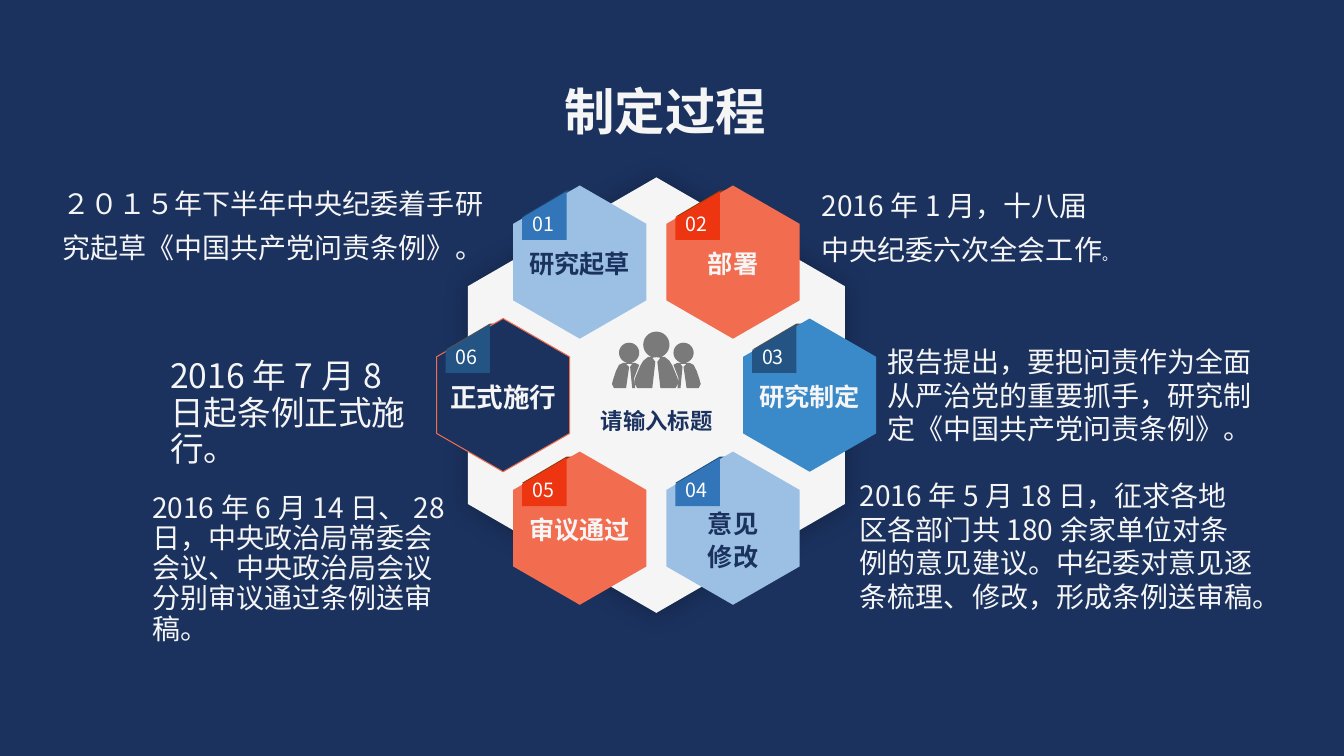
import math
from dataclasses import dataclass

from lxml import etree
from pptx import Presentation
from pptx.dml.color import RGBColor
from pptx.enum import text as t
from pptx.oxml import ns
from pptx.util import Inches, Pt

COLORS = {
    "navy": "1B325F", "white": "FFFFFF", "paper": "F5F5F5", "gray": "7A7A7A",
    "sky": "9CC0E4", "blue": "3A89C9", "coral": "F26C4F",
    "blue tag": "3275B8", "red tag": "ED3611", "teal tag": "245484",
    "blue fold": "1F4E79", "brown fold": "843C0B", "gray fold": "525252",
}
SANS = "Noto Sans CJK SC"
SANS_JP = "Noto Sans CJK JP"
CENTER_X, CENTER_Y = 6.51, 3.92
STEP_X, STEP_Y = 0.76, 1.32

Points = list[tuple[float, float]]


@dataclass
class Stage:
    number: str
    label: str
    column: int
    row: int
    fill: str
    tag: str
    fold: str
    ink: str = "paper"
    size: int = 18
    top_inset: float = 0.05
    outline: str | None = None


@dataclass
class Note:
    left: float
    top: float
    width: float
    height: float
    words: str
    spacing: float = 1.0
    size: int = 20
    ink: str = "paper"
    bold: bool = False
    centered: bool = False
    grows: bool = True
    small_end: str = ""


STAGES = [
    Stage("01", "研究起草", -1, -1, "sky", "blue tag", "blue fold", "navy"),
    Stage("02", "部署", 1, -1, "coral", "red tag", "brown fold"),
    Stage("03", "研究制定", 2, 0, "blue", "teal tag", "gray fold"),
    Stage("04", "意见\n修改", 1, 1, "sky", "blue tag", "blue fold", "navy", top_inset=0.25),
    Stage("05", "审议通过", -1, 1, "coral", "red tag", "brown fold"),
    Stage("06", "正式施行", -2, 0, "navy", "teal tag", "gray fold", size=19, outline="coral"),
]

NOTES = [
    Note(5.65, 3.85, 1.73, 0.65, "请输入标题", size=16, ink="navy", bold=True,
         centered=True, grows=False),
    Note(0.52, 1.7, 4.4, 0.98, "２０１５年下半年中央纪委着手研究起草《中国共产党问责条例》。", 1.3),
    Note(1.41, 4.85, 3.15, 1.31,
         "2016年6月14日、28日，中央政治局常委会会议、中央政治局会议分别审议通过条例送审稿。", 0.9),
    Note(8.43, 4.7, 4.1, 1.45,
         "2016年5月18日，征求各地区各部门共180余家单位对条例的意见建议。"
         "中纪委对意见逐条梳理、修改，形成条例送审稿。"),
    Note(8.05, 1.72, 2.99, 0.98, "2016年1月，十八届中央纪委六次全会工作", 1.3, small_end="。"),
    Note(1.59, 3.52, 2.62, 0.83, "2016年7月8日起条例正式施行。", 0.9, 24),
    Note(8.7, 3.37, 3.92, 1.11,
         "报告提出，要把问责作为全面从严治党的重要抓手，研究制定《中国共产党问责条例》。"),
    Note(5.13, 0.63, 2.94, 0.75, "制定过程", 1.2, 36, bold=True, centered=True),
]

TAG: Points = [(-0.57, -0.22), (-0.13, -0.22), (-0.13, -0.7), (-0.57, -0.44)]
FOLD: Points = [(-0.57, -0.45), (-0.13, -0.71), (0, -0.71), (0, -0.45)]

# Bodies of the people icon, measured from the axis of each head.
HALF_BODY: Points = [(0.08, 0.12), (0.13, 0.16), (0.16, 0.21), (0.21, 0.33), (0.22, 0.38),
                     (0.19, 0.43), (0.04, 0.43), (0.01, 0.17), (0.04, 0.13)]
FRONT_BODY: Points = HALF_BODY + [(-x, y) for x, y in reversed(HALF_BODY)]
SIDE_BODY: Points = [(0.06, 0.1), (0.1, 0.12), (0.13, 0.18), (0.16, 0.27), (0.17, 0.31),
                     (0.15, 0.35), (0.03, 0.35), (0, 0.14), (0.03, 0.11), (-0.03, 0.11),
                     (-0.01, 0.14), (-0.03, 0.35), (-0.06, 0.35), (-0.05, 0.25),
                     (-0.1, 0.12), (-0.06, 0.1)]


def color(name: str) -> RGBColor:
    return RGBColor.from_string(COLORS[name])


def hexagon(half_width: float, half_height: float, shoulder: float) -> Points:
    return [(0, -half_height), (half_width, -shoulder), (half_width, shoulder),
            (0, half_height), (-half_width, shoulder), (-half_width, -shoulder)]


def draw_outline(page, x: float, y: float, contours: list[Points], fill: str):
    """Draw closed contours, given as offsets from (x, y), as one flat shape."""
    contours = [[(Inches(x + dx), Inches(y + dy)) for dx, dy in points] for points in contours]
    builder = page.shapes.build_freeform(*contours[0][0])
    for index, points in enumerate(contours):
        if index:
            builder.move_to(*points[0])
        builder.add_line_segments(points[1:], close=True)
    shape = builder.convert_to_shape()
    shape.shadow.inherit = False
    shape.fill.solid()
    shape.fill.fore_color.rgb = color(fill)
    shape.line.fill.background()
    return shape


def style_span(span, font: str, size: int, ink: str, bold: bool = False) -> None:
    span.font.name = font
    span.font.size = Pt(size)
    span.font.bold = bold
    span.font.color.rgb = color(ink)
    east_asian = etree.SubElement(span.font._element, ns.qn("a:ea"))
    east_asian.set("typeface", font)


def draw_platform(page) -> None:
    """Draw the large pale hexagon with its soft shadow."""
    shape = draw_outline(page, CENTER_X, CENTER_Y, [hexagon(1.87, 2.16, 1.08)], "paper")
    effects = shape._element.spPr.find(ns.qn("a:effectLst"))
    shadow = etree.SubElement(effects, ns.qn("a:outerShdw"), blurRad=str(Pt(18)),
                              dist="0", dir="0", algn="ctr", rotWithShape="0")
    black = etree.SubElement(shadow, ns.qn("a:srgbClr"), val="000000")
    etree.SubElement(black, ns.qn("a:alpha"), val="28000")


def draw_stage(page, stage: Stage) -> None:
    x = CENTER_X + stage.column * STEP_X
    y = CENTER_Y + stage.row * STEP_Y
    draw_outline(page, x, y, [FOLD], stage.fold)

    cell = draw_outline(page, x, y, [hexagon(0.66, 0.76, 0.38)], stage.fill)
    if stage.outline:
        cell.line.color.rgb = color(stage.outline)
        cell.line.width = Pt(0.75)
    frame = cell.text_frame
    frame.text = stage.label
    frame.word_wrap = True
    frame.margin_top = Inches(stage.top_inset)
    frame.vertical_anchor = t.MSO_ANCHOR.MIDDLE
    for para in frame.paragraphs:
        para.alignment = t.PP_ALIGN.CENTER
        para.line_spacing = 1.1
        style_span(para.runs[0], SANS_JP, stage.size, stage.ink, True)

    tag = draw_outline(page, x, y, [TAG], stage.tag)
    tag.text_frame.text = stage.number
    tag.text_frame.vertical_anchor = t.MSO_ANCHOR.BOTTOM
    para = tag.text_frame.paragraphs[0]
    para.alignment = t.PP_ALIGN.LEFT
    style_span(para.runs[0], SANS, 14, "white")


def draw_person(page, x: float, y: float, radius: float, body: Points) -> None:
    angles = [math.tau * step / 32 for step in range(32)]
    head = [(radius * math.cos(angle), radius * math.sin(angle)) for angle in angles]
    draw_outline(page, x, y, [head, body], "gray")


def draw_note(page, note: Note) -> None:
    box = page.shapes.add_textbox(*map(Inches, (note.left, note.top, note.width, note.height)))
    frame = box.text_frame
    frame.text = note.words
    frame.word_wrap = True
    if note.grows:
        frame.auto_size = t.MSO_AUTO_SIZE.SHAPE_TO_FIT_TEXT
    else:
        frame.vertical_anchor = t.MSO_ANCHOR.MIDDLE
    para = frame.paragraphs[0]
    para.alignment = t.PP_ALIGN.CENTER if note.centered else t.PP_ALIGN.LEFT
    para.line_spacing = note.spacing
    style_span(para.runs[0], SANS, note.size, note.ink, note.bold)
    if note.small_end:
        span = para.add_run()
        span.text = note.small_end
        style_span(span, SANS, 11, note.ink)


def main() -> None:
    deck = Presentation()
    deck.slide_width, deck.slide_height = Inches(13.33), Inches(7.5)
    page = deck.slides.add_slide(deck.slide_layouts[6])
    page.background.fill.solid()
    page.background.fill.fore_color.rgb = color("navy")

    draw_platform(page)
    for stage in STAGES:
        draw_stage(page, stage)
    draw_person(page, CENTER_X, 3.42, 0.13, FRONT_BODY)
    for side in (-1, 1):
        body = [(side * x, y) for x, y in SIDE_BODY]
        draw_person(page, CENTER_X + side * 0.27, 3.5, 0.1, body)
    for note in NOTES:
        draw_note(page, note)
    deck.save("out.pptx")


if __name__ == "__main__":
    main()
